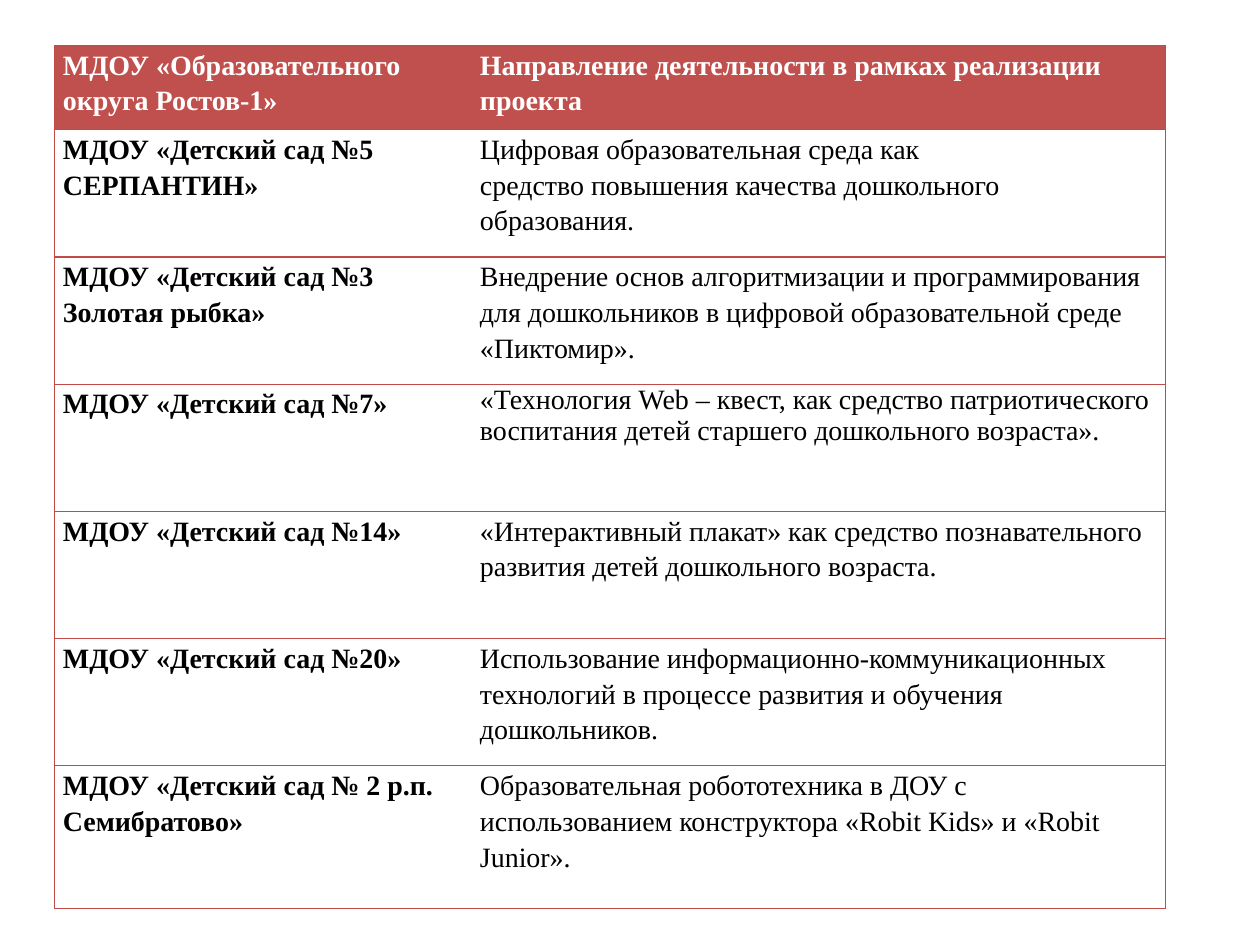
from lxml.etree import SubElement
from pptx import Presentation
from pptx.dml.color import RGBColor
from pptx.oxml.ns import qn
from pptx.util import Inches, Pt

COLORS = {"header": "C0504D", "border": "BF4C48", "white": "FFFFFF", "black": "000000"}
FONT = "Times New Roman"
COLUMN_WIDTHS = [3.31, 5.51]
ROW_HEIGHTS = [0.67] + [1.01] * 5 + [1.13]
SINGLE_SPACED_ROW = 3

# Each cell is a list of paragraphs
ROWS = [
    (["МДОУ «Образовательного округа Ростов-1»"],
     ["Направление деятельности в рамках реализации проекта"]),
    (["МДОУ «Детский сад №5 СЕРПАНТИН»"],
     ["Цифровая образовательная среда как",
      "средство повышения качества дошкольного образования."]),
    (["МДОУ «Детский сад №3 Золотая рыбка»"],
     ["Внедрение основ алгоритмизации и программирования для дошкольников "
      "в цифровой образовательной среде «Пиктомир»."]),
    (["МДОУ «Детский сад №7»"],
     ["«Технология Web – квест, как средство патриотического воспитания "
      "детей старшего дошкольного возраста»."]),
    (["МДОУ «Детский сад №14»"],
     ["«Интерактивный плакат» как средство познавательного развития детей "
      "дошкольного возраста."]),
    (["МДОУ «Детский сад №20»"],
     ["Использование информационно-коммуникационных технологий в процессе "
      "развития и обучения дошкольников."]),
    (["МДОУ «Детский сад № 2 р.п. Семибратово»"],
     ["Образовательная робототехника в ДОУ с использованием конструктора "
      "«Robit Kids» и «Robit Junior»."]),
]


def set_borders(cell, visible_sides):
    """Draw the named sides and hide the others; borders precede the fill."""
    properties = cell._tc.get_or_add_tcPr()
    for side in ("L", "R", "T", "B"):
        line = SubElement(properties, qn(f"a:ln{side}"), w=str(Pt(0.75)))
        if side in visible_sides:
            fill = SubElement(line, qn("a:solidFill"))
            SubElement(fill, qn("a:srgbClr"), val=COLORS["border"])
        else:
            SubElement(line, qn("a:noFill"))


def write_cell(cell, texts, color, bold, line_spacing):
    cell.margin_left = cell.margin_right = Inches(0.07)
    cell.margin_top = cell.margin_bottom = 0
    frame = cell.text_frame
    for index, text in enumerate(texts):
        paragraph = frame.add_paragraph() if index else frame.paragraphs[0]
        paragraph.line_spacing = line_spacing
        run = paragraph.add_run()
        run.text = text
        run.font.name = FONT
        run.font.size = Pt(16)
        run.font.bold = bold
        run.font.color.rgb = RGBColor.from_string(color)


def fill_cell(cell, is_header):
    if is_header:
        cell.fill.solid()
        cell.fill.fore_color.rgb = RGBColor.from_string(COLORS["header"])
    else:
        cell.fill.background()


def add_project_table(slide):
    table = slide.shapes.add_table(
        len(ROWS), len(COLUMN_WIDTHS), Inches(0.43), Inches(0.36),
        Inches(sum(COLUMN_WIDTHS)), Inches(sum(ROW_HEIGHTS))).table
    table.horz_banding = False
    for column, width in zip(table.columns, COLUMN_WIDTHS):
        column.width = Inches(width)

    for row_index, (row, height) in enumerate(zip(ROWS, ROW_HEIGHTS)):
        table.rows[row_index].height = Inches(height)
        is_header = row_index == 0
        color = COLORS["white" if is_header else "black"]
        for column_index, texts in enumerate(row):
            cell = table.cell(row_index, column_index)
            is_name = column_index == 0
            single = row_index == SINGLE_SPACED_ROW and not is_name
            set_borders(cell, "LTB" if is_name else "RTB")
            fill_cell(cell, is_header)
            write_cell(cell, texts, color, is_header or is_name,
                       1.0 if single else 1.15)


def main():
    presentation = Presentation()
    presentation.slide_width = Inches(10)
    presentation.slide_height = Inches(7.5)
    slide = presentation.slides.add_slide(presentation.slide_layouts[6])
    add_project_table(slide)
    presentation.save("out.pptx")


if __name__ == "__main__":
    main()
